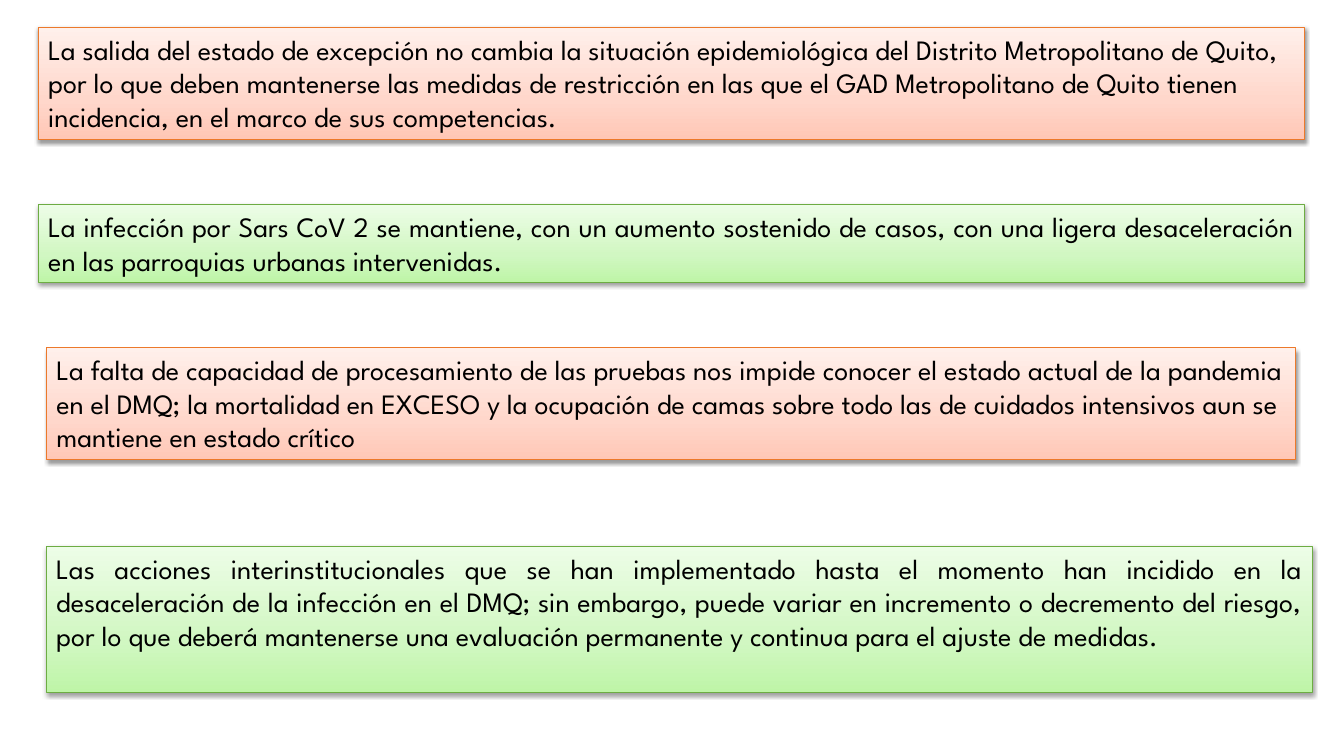
from lxml.etree import SubElement
from pptx import Presentation
from pptx.dml.color import RGBColor
from pptx.enum.shapes import MSO_SHAPE
from pptx.enum.text import MSO_ANCHOR, MSO_AUTO_SIZE, PP_ALIGN
from pptx.oxml.ns import qn
from pptx.util import Inches, Pt

COLORS = {
    "text": "000000",
    "shadow": "000000",
    "orange_line": "EC792B",
    "orange_dark": "FFC7B6",
    "orange_mid": "FFD7CB",
    "orange_light": "FFF0EB",
    "green_line": "6DAC43",
    "green_dark": "BEF5A7",
    "green_mid": "D1F7C2",
    "green_light": "EDFDE7",
}
STOPS = {"dark": 0, "mid": 35, "light": 100}
FRAME_FORMAT = {
    "word_wrap": True,
    "auto_size": MSO_AUTO_SIZE.SHAPE_TO_FIT_TEXT,
    "vertical_anchor": MSO_ANCHOR.TOP,
}
FONT_FORMAT = {"name": "League Spartan", "size": Pt(20)}
ALIGNMENTS = {"orange": PP_ALIGN.LEFT, "green": PP_ALIGN.JUSTIFY}

CONCLUSIONS = [
    ("orange", (0.38, 0.27, 12.56, 1.11),
     "La salida del estado de excepción no cambia la situación epidemiológica "
     "del Distrito Metropolitano de Quito, por lo que deben mantenerse las "
     "medidas de restricción en las que el GAD Metropolitano de Quito tienen "
     "incidencia, en el marco de sus competencias."),
    ("green", (0.38, 2.03, 12.56, 0.77),
     "La infección por Sars CoV 2 se mantiene, con un aumento sostenido de "
     "casos, con una ligera desaceleración en las parroquias urbanas "
     "intervenidas."),
    ("green", (0.46, 5.42, 12.56, 1.45),
     "Las acciones interinstitucionales que se han implementado hasta el "
     "momento han incidido en la desaceleración de la infección en el DMQ; "
     "sin embargo, puede variar en incremento o decremento del riesgo, por lo "
     "que deberá mantenerse una evaluación permanente y continua para el "
     "ajuste de medidas."),
    ("orange", (0.46, 3.45, 12.39, 1.11),
     "La falta de capacidad de procesamiento de las pruebas nos impide conocer "
     "el estado actual de la pandemia en el DMQ; la mortalidad en EXCESO y la "
     "ocupación de camas sobre todo las de cuidados intensivos aun se mantiene "
     "en estado crítico"),
]


def apply_format(target, values):
    for attribute, value in values.items():
        setattr(target, attribute, value)


def rgb(key):
    return RGBColor.from_string(COLORS[key])


def add_xml_color(parent, key):
    return SubElement(parent, qn("a:srgbClr"), val=COLORS[key])


def fill_with_gradient(box, theme):
    box.fill.gradient()
    box.fill.gradient_angle = 90
    stop_list = next(box.element.spPr.iter(qn("a:gsLst")))
    for default_stop in list(stop_list):
        stop_list.remove(default_stop)
    for tone, percent in STOPS.items():
        stop = SubElement(stop_list, qn("a:gs"), pos=str(percent * 1000))
        add_xml_color(stop, f"{theme}_{tone}")


def cast_shadow(box):
    box.shadow.inherit = False
    effects = box.element.spPr.find(qn("a:effectLst"))
    shadow = SubElement(
        effects, qn("a:outerShdw"), blurRad=str(Pt(3.1)), dist=str(Pt(1.6)),
        dir=str(90 * 60000), rotWithShape="0")
    SubElement(add_xml_color(shadow, "shadow"), qn("a:alpha"), val="38000")


def write_text(box, text, alignment):
    apply_format(box.text_frame, FRAME_FORMAT)
    paragraph = box.text_frame.paragraphs[0]
    paragraph.alignment = alignment
    run = paragraph.add_run()
    run.text = text
    apply_format(run.font, FONT_FORMAT)
    run.font.color.rgb = rgb("text")


def add_conclusion(slide, theme, bounds, text):
    box = slide.shapes.add_shape(MSO_SHAPE.RECTANGLE, *map(Inches, bounds))
    fill_with_gradient(box, theme)
    box.line.color.rgb = rgb(f"{theme}_line")
    box.line.width = Pt(0.75)
    cast_shadow(box)
    write_text(box, text, ALIGNMENTS[theme])


def main():
    presentation = Presentation()
    apply_format(presentation, {"slide_width": Inches(13.33),
                                "slide_height": Inches(7.5)})
    slide = presentation.slides.add_slide(presentation.slide_layouts[6])
    for theme, bounds, text in CONCLUSIONS:
        add_conclusion(slide, theme, bounds, text)
    presentation.save("out.pptx")


if __name__ == "__main__":
    main()
